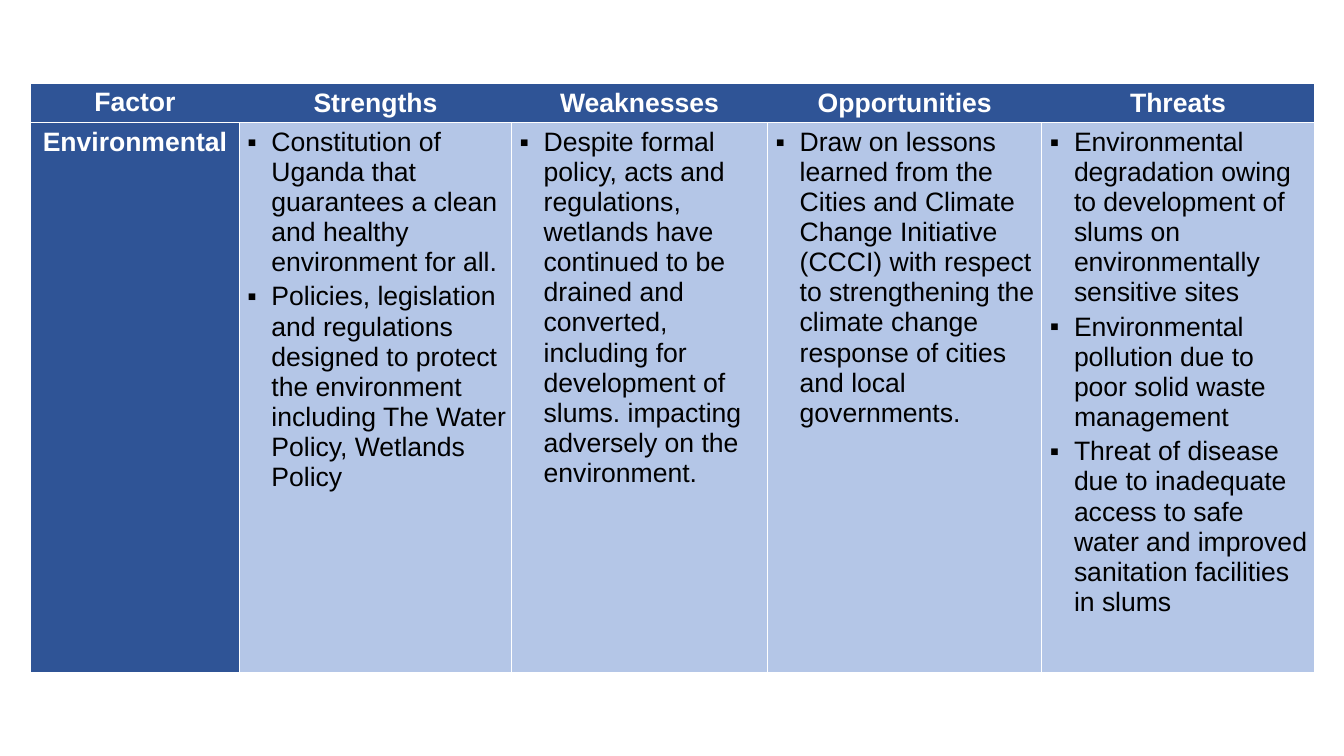
from lxml import etree
from pptx import Presentation
from pptx import util as u
from pptx.dml.color import RGBColor
from pptx.enum import text
from pptx.oxml.ns import qn

NAVY = RGBColor(0x2F, 0x54, 0x96)
PALE = RGBColor(0xB4, 0xC6, 0xE7)
WHITE = RGBColor(0xFF, 0xFF, 0xFF)
BLACK = RGBColor(0, 0, 0)

COLUMN_WIDTHS = [5.26, 6.86, 6.45, 6.91, 6.86]
ROW_HEIGHTS = [0.99, 13.87]
HEADINGS = ["Factor", "Strengths", "Weaknesses", "Opportunities", "Threats"]
FACTOR = "Environmental"
POINTS = [
    [
        "Constitution of Uganda that guarantees a clean and healthy environment for all.",
        "Policies, legislation and regulations designed to protect the environment "
        "including The Water Policy, Wetlands Policy",
    ],
    [
        "Despite formal policy, acts and regulations, wetlands have continued to be "
        "drained and converted, including for development of slums. impacting "
        "adversely on the environment.",
    ],
    [
        "Draw on lessons learned from the Cities and Climate Change Initiative (CCCI) "
        "with respect to strengthening the climate change response of cities and "
        "local governments.",
    ],
    [
        "Environmental degradation owing to development of slums on environmentally "
        "sensitive sites",
        "Environmental pollution due to poor solid waste management",
        "Threat of disease due to inadequate access to safe water and improved "
        "sanitation facilities in slums",
    ],
]


def set_borders(cell, hidden=()):
    properties = cell._tc.get_or_add_tcPr()
    for index, side in enumerate(("lnL", "lnR", "lnT", "lnB")):
        line = etree.Element(qn(f"a:{side}"), w=str(u.Pt(1)))
        if side in hidden:
            etree.SubElement(line, qn("a:noFill"))
        else:
            fill = etree.SubElement(line, qn("a:solidFill"))
            etree.SubElement(fill, qn("a:srgbClr"), val=str(WHITE))
        properties.insert(index, line)


def indent(para, left, hanging, bullet=None):
    properties = para._p.get_or_add_pPr()
    properties.set("marL", str(u.Cm(left)))
    properties.set("indent", str(-u.Cm(hanging)))
    if bullet:
        etree.SubElement(properties, qn("a:buFont"), typeface="Arial")
        etree.SubElement(properties, qn("a:buChar"), char=bullet)


def fill_cell(cell, lines, fill, color, bold=False, space=3):
    cell.fill.solid()
    cell.fill.fore_color.rgb = fill
    cell.margin_left = cell.margin_right = u.Cm(0.1)
    cell.margin_top = cell.margin_bottom = u.Cm(0.1)
    frame = cell.text_frame
    frame.text = "\n".join(lines)
    for para in frame.paragraphs:
        para.alignment = text.PP_ALIGN.CENTER if bold else text.PP_ALIGN.LEFT
        para.line_spacing = 1.02
        para.space_after = u.Pt(space)
        para.font.name = "Arial"
        para.font.size = u.Pt(19)
        para.font.bold = bold
        para.font.color.rgb = color
    return frame.paragraphs


def add_swot_table(page, left, top, width, height):
    table = page.shapes.add_table(
        len(ROW_HEIGHTS), len(COLUMN_WIDTHS), left, top, width, height
    ).table
    for column, size in zip(table.columns, COLUMN_WIDTHS):
        column.width = int(width * size / sum(COLUMN_WIDTHS))
    for row, size in zip(table.rows, ROW_HEIGHTS):
        row.height = int(height * size / sum(ROW_HEIGHTS))

    last = len(HEADINGS) - 1
    for index, heading in enumerate(HEADINGS):
        cell = table.cell(0, index)
        paras = fill_cell(cell, [heading], NAVY, WHITE, True, 3 if index else 8)
        if index:
            cell.vertical_anchor = text.MSO_ANCHOR.MIDDLE
            indent(paras[0], 0.36, 0.5)
        inner = {"lnL": index > 0, "lnR": index < last}
        set_borders(cell, [side for side, hide in inner.items() if hide])

    factor = table.cell(1, 0)
    fill_cell(factor, [FACTOR], NAVY, WHITE, True, 8)
    set_borders(factor)
    for index, points in enumerate(POINTS, 1):
        cell = table.cell(1, index)
        for para in fill_cell(cell, points, PALE, BLACK):
            indent(para, 0.71, 0.61, "▪")
        set_borders(cell)


def main():
    deck = Presentation()
    deck.slide_width = u.Cm(33.87)
    deck.slide_height = u.Cm(19.05)
    page = deck.slides.add_slide(deck.slide_layouts[6])
    add_swot_table(page, u.Cm(0.77), u.Cm(2.1), u.Cm(32.35), u.Cm(14.86))
    deck.save("out.pptx")


if __name__ == "__main__":
    main()
